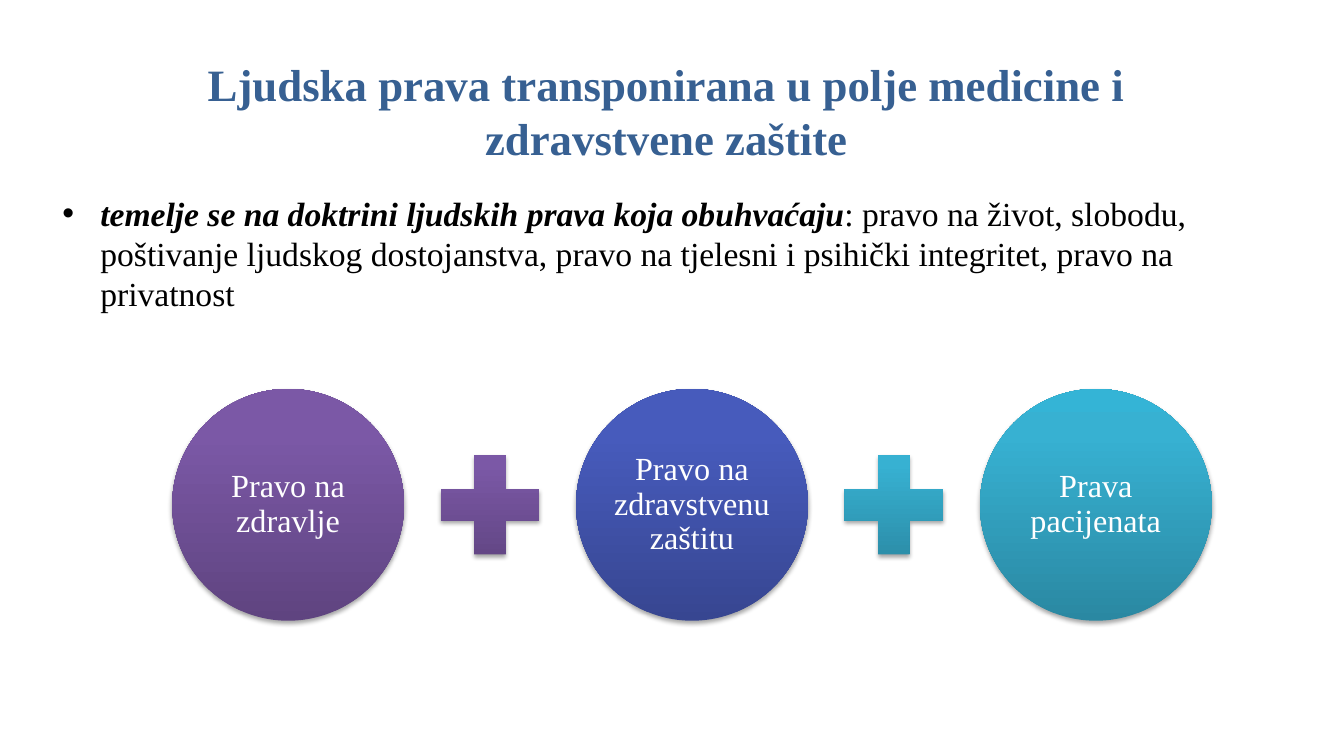
from copy import deepcopy

from lxml import etree
from pptx import Presentation
from pptx import util as u
from pptx.dml.color import RGBColor
from pptx.enum import shapes, text
from pptx.oxml.ns import qn

FONT = "Times New Roman"
BLACK = RGBColor(0x00, 0x00, 0x00)
WHITE = RGBColor(0xFF, 0xFF, 0xFF)
TITLE_BLUE = RGBColor(0x37, 0x60, 0x92)
PURPLE = (RGBColor(0x5F, 0x44, 0x80), RGBColor(0x7B, 0x58, 0xA6), RGBColor(0x7C, 0x57, 0xA8))
INDIGO = (RGBColor(0x37, 0x46, 0x91), RGBColor(0x47, 0x5B, 0xBC), RGBColor(0x45, 0x5A, 0xBF))
TEAL = (RGBColor(0x2A, 0x88, 0xA2), RGBColor(0x37, 0xB1, 0xD2), RGBColor(0x34, 0xB4, 0xD6))
STOPS = (0, 0.8, 1)

COLS, ROWS = 80, 45
CIRCLE, PLUS, GAP = 13.8, 8, 1.12
PITCH = CIRCLE + PLUS + 2 * GAP
LEFT, MIDDLE = 10.25, 30.05


class Deck:
    def __init__(self, prs):
        self.cw = prs.slide_width / COLS
        self.rh = prs.slide_height / ROWS
        self.slide = prs.slides.add_slide(prs.slide_layouts[1])

    def box(self, x, y, w, h):
        return int(x * self.cw), int(y * self.rh), int(w * self.cw), int(h * self.rh)

    def run(self, p, words, size, color, bold=False, italic=False):
        r = p.add_run()
        r.text = words
        f = r.font
        f.name, f.size, f.bold, f.italic = FONT, u.Pt(size), bold, italic
        f.color.rgb = color

    def place(self, sp, *cells):
        sp.left, sp.top, sp.width, sp.height = self.box(*cells)
        sp.text_frame.auto_size = text.MSO_AUTO_SIZE.NONE
        return sp.text_frame

    def title(self, lines, *cells):
        tf = self.place(self.slide.shapes.title, *cells)
        tf.vertical_anchor = text.MSO_ANCHOR.MIDDLE
        for i, line in enumerate(lines):
            p = tf.add_paragraph() if i else tf.paragraphs[0]
            p.alignment = text.PP_ALIGN.CENTER
            self.run(p, line, 32, TITLE_BLUE, bold=True)

    def bullet(self, lead, rest, *cells):
        p = self.place(self.slide.placeholders[1], *cells).paragraphs[0]
        self.run(p, lead, 24, BLACK, bold=True, italic=True)
        self.run(p, rest, 24, BLACK)

    def shade(self, sp, colors):
        sp.fill.gradient()
        sp.fill.gradient_angle = 90
        stops = sp._element.spPr.find(".//" + qn("a:gsLst"))
        stops.append(deepcopy(stops[-1]))
        for stop, position, color in zip(sp.fill.gradient_stops, STOPS, colors):
            stop.position = position
            stop.color.rgb = color

    def shadow(self, sp):
        sp.shadow.inherit = False
        effects = sp._element.spPr.find(qn("a:effectLst"))
        outer = etree.SubElement(effects, qn("a:outerShdw"), blurRad=str(u.Pt(3.1)),
                                 dist=str(u.Pt(1.8)), dir="5400000", rotWithShape="0")
        black = etree.SubElement(outer, qn("a:srgbClr"), val=str(BLACK))
        etree.SubElement(black, qn("a:alpha"), val="35000")

    def symbol(self, kind, x, size, colors):
        sp = self.slide.shapes.add_shape(kind, *self.box(x, MIDDLE - size / 2, size, size))
        self.shade(sp, colors)
        sp.line.fill.background()
        self.shadow(sp)
        return sp

    def circle(self, x, words, colors):
        tf = self.symbol(shapes.MSO_SHAPE.OVAL, x, CIRCLE, colors).text_frame
        tf.word_wrap = True
        tf.vertical_anchor = text.MSO_ANCHOR.MIDDLE
        tf.margin_left = tf.margin_right = tf.margin_top = tf.margin_bottom = u.Inches(0.03)
        p = tf.paragraphs[0]
        p.alignment = text.PP_ALIGN.CENTER
        p.line_spacing = 0.9
        self.run(p, words, 23, WHITE)

    def plus(self, x, colors):
        self.symbol(shapes.MSO_SHAPE.MATH_PLUS, x, PLUS, colors)


def main():
    prs = Presentation()
    prs.slide_width, prs.slide_height = u.Inches(13.33), u.Inches(7.5)
    deck = Deck(prs)
    deck.title(["Ljudska prava transponirana u polje medicine i ", "zdravstvene zaštite "],
               3.6, 2.64, 72.8, 7.86)
    deck.bullet("temelje se na doktrini ljudskih prava koja obuhvaćaju",
                ": pravo na život, slobodu, poštivanje ljudskog dostojanstva, "
                "pravo na tjelesni i psihički integritet, pravo na privatnost",
                3.12, 11.16, 68.3, 12.66)
    rights = [("Pravo na zdravlje", PURPLE, PURPLE),
              ("Pravo na zdravstvenu zaštitu", INDIGO, TEAL),
              ("Prava pacijenata", TEAL, None)]
    for i, (words, colors, plus_colors) in enumerate(rights):
        x = LEFT + i * PITCH
        deck.circle(x, words, colors)
        if plus_colors:
            deck.plus(x + CIRCLE + GAP, plus_colors)
    prs.save("out.pptx")


if __name__ == "__main__":
    main()
